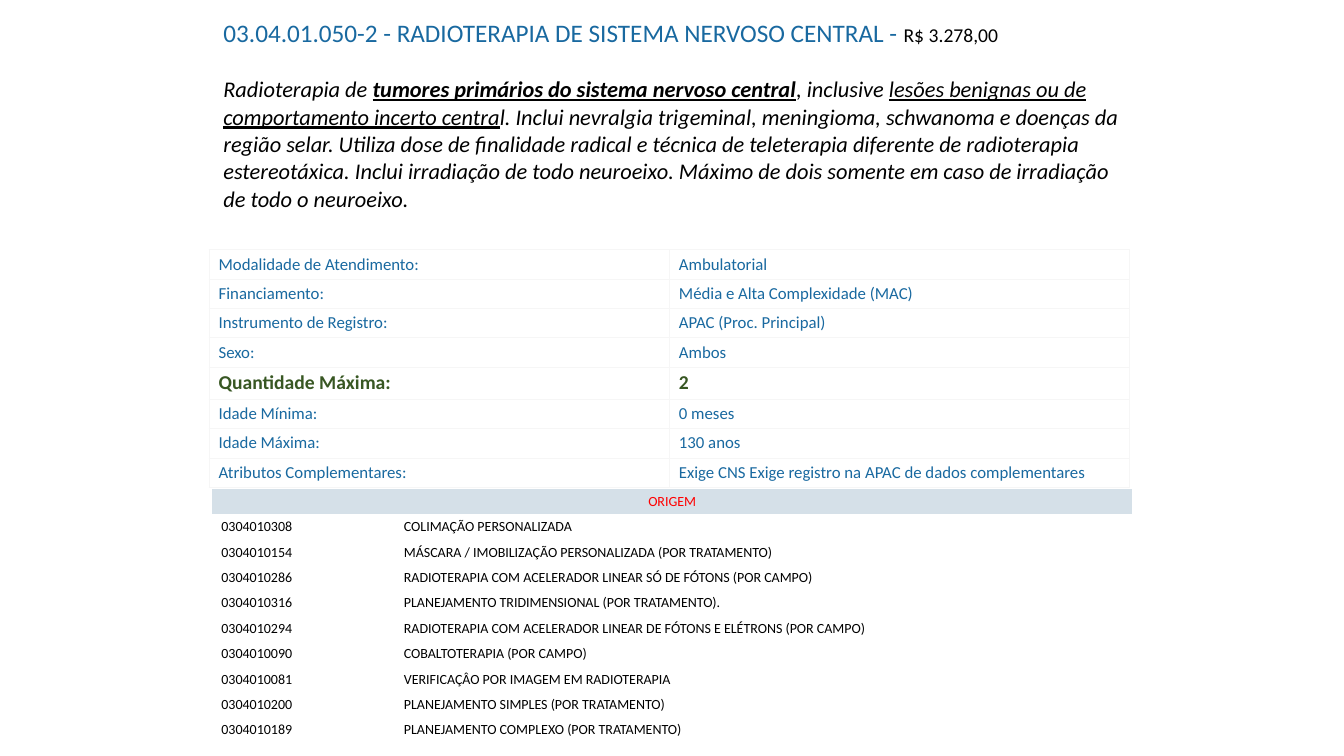
from dataclasses import dataclass

from lxml import etree
from pptx import Presentation
from pptx.dml.color import RGBColor
from pptx.enum.text import MSO_ANCHOR, PP_ALIGN
from pptx.oxml.ns import qn
from pptx.util import Cm, Pt

MIDDLE = MSO_ANCHOR.MIDDLE
LEFT, CENTER = PP_ALIGN.LEFT, PP_ALIGN.CENTER
PLAIN_TABLE = "{2D5ABB26-0587-4C30-8999-92F81FD0307C}"


@dataclass(frozen=True)
class Theme:
    font: str = "Calibri"
    blue: str = "1969A0"
    green: str = "385723"
    red: str = "FF0000"
    black: str = "000000"
    white: str = "FFFFFF"
    band: str = "D5E0E8"
    grid: str = "F6F6F6"
    title: int = 18
    description: int = 16
    emphasis: int = 14
    detail: int = 12
    code: int = 10


class ProcedureSlide:
    def __init__(self, slide, theme):
        self.slide = slide
        self.theme = theme

    def table(self, left, top, widths, heights):
        frame = self.slide.shapes.add_table(
            len(heights), len(widths), Cm(left), Cm(top),
            Cm(sum(widths)), Cm(sum(heights)))
        table = frame.table
        table.first_row = table.horz_banding = False
        table._tbl.tblPr.find(qn("a:tableStyleId")).text = PLAIN_TABLE
        for column, width in zip(table.columns, widths):
            column.width = Cm(width)
        for row, height in zip(table.rows, heights):
            row.height = Cm(height)
        return table

    def cell(self, cell, fill, margins=(0.24, 0.1)):
        cell.vertical_anchor = MIDDLE
        cell.margin_left = cell.margin_right = Cm(margins[0])
        cell.margin_top = cell.margin_bottom = Cm(margins[1])
        cell.fill.solid()
        cell.fill.fore_color.rgb = RGBColor.from_string(fill)

    def borders(self, cell, color, width=0.75):
        properties = cell._tc.get_or_add_tcPr()
        for place, side in enumerate(("a:lnL", "a:lnR", "a:lnT", "a:lnB")):
            line = etree.Element(qn(side), w=str(Pt(width)))
            fill = etree.SubElement(line, qn("a:solidFill"))
            etree.SubElement(fill, qn("a:srgbClr"), val=color)
            properties.insert(place, line)

    def run(self, paragraph, text, size, color,
            bold=False, italic=False, underline=False):
        run = paragraph.add_run()
        run.text = text
        font = run.font
        font.name = self.theme.font
        font.size = Pt(size)
        font.color.rgb = RGBColor.from_string(color)
        font.bold, font.italic, font.underline = bold, italic, underline

    def text_cell(self, cell, text, size, color, fill, bold=False, align=LEFT):
        self.cell(cell, fill)
        paragraph = cell.text_frame.paragraphs[0]
        paragraph.alignment = align
        self.run(paragraph, text, size, color, bold)


# Content: (text, bold, underline)
DESCRIPTION = [
    ("Radioterapia de ", False, False),
    ("tumores primários do sistema nervoso central", True, True),
    (", inclusive ", False, False),
    ("lesões benignas ou de comportamento incerto centra", False, True),
    ("l. Inclui nevralgia trigeminal, meningioma, schwanoma e doenças da "
     "região selar. Utiliza dose de finalidade radical e técnica de "
     "teleterapia diferente de radioterapia estereotáxica. Inclui irradiação "
     "de todo neuroeixo. Máximo de dois somente em caso de irradiação de "
     "todo o neuroeixo.", False, False),
]
ORIGINS = [
    ("0304010308", "COLIMAÇÃO PERSONALIZADA"),
    ("0304010154", "MÁSCARA / IMOBILIZAÇÃO PERSONALIZADA (POR TRATAMENTO)"),
    ("0304010286", "RADIOTERAPIA COM ACELERADOR LINEAR SÓ DE FÓTONS (POR CAMPO)"),
    ("0304010316", "PLANEJAMENTO TRIDIMENSIONAL (POR TRATAMENTO)."),
    ("0304010294",
     "RADIOTERAPIA COM ACELERADOR LINEAR DE FÓTONS E ELÉTRONS (POR CAMPO)"),
    ("0304010090", "COBALTOTERAPIA (POR CAMPO)"),
    ("0304010081", "VERIFICAÇÂO POR IMAGEM EM RADIOTERAPIA"),
    ("0304010200", "PLANEJAMENTO SIMPLES (POR TRATAMENTO)"),
    ("0304010189", "PLANEJAMENTO COMPLEXO (POR TRATAMENTO)"),
]
MAXIMUM = "Quantidade Máxima:"
DETAILS = [
    ("Modalidade de Atendimento:", "Ambulatorial"),
    ("Financiamento:", "Média e Alta Complexidade (MAC)"),
    ("Instrumento de Registro:", "APAC (Proc. Principal)"),
    ("Sexo:", "Ambos"),
    (MAXIMUM, "2"),
    ("Idade Mínima:", "0 meses"),
    ("Idade Máxima:", "130 anos"),
    ("Atributos Complementares:",
     "Exige CNS Exige registro na APAC de dados complementares"),
]


def main():
    presentation = Presentation()
    presentation.slide_width, presentation.slide_height = Cm(33.87), Cm(19.05)
    theme = Theme()
    page = ProcedureSlide(
        presentation.slides.add_slide(presentation.slide_layouts[6]), theme)

    # Procedure title, price and description
    summary = page.table(5.38, 0.33, [23.2], [5.08]).cell(0, 0)
    page.cell(summary, theme.white, (0.25, 0.13))
    title = summary.text_frame.paragraphs[0]
    page.run(title, "03.04.01.050-2 - RADIOTERAPIA DE SISTEMA NERVOSO CENTRAL - ",
             theme.title, theme.blue)
    page.run(title, "R$ 3.278,00", theme.emphasis, theme.black)
    description = summary.text_frame.add_paragraph()
    description.space_before = Pt(19.5)
    for text, bold, underline in DESCRIPTION:
        page.run(description, text, theme.description, theme.black,
                 bold, True, underline)

    # Origin codes under a merged heading
    origins = page.table(5.34, 12.32, [4.6, 18.6], [0.64] * (len(ORIGINS) + 1))
    heading = origins.cell(0, 0)
    heading.merge(origins.cell(0, 1))
    page.text_cell(heading, "ORIGEM", theme.code, theme.red, theme.band,
                   align=CENTER)
    for row, origin in enumerate(ORIGINS, 1):
        for column, text in enumerate(origin):
            page.text_cell(origins.cell(row, column), text, theme.code,
                           theme.black, theme.white)

    # Procedure attributes, with the maximum quantity emphasised
    heights = [0.81 if label == MAXIMUM else 0.74 for label, _ in DETAILS]
    details = page.table(5.27, 6.29, [11.6, 11.6], heights)
    for row, detail in enumerate(DETAILS):
        strong = detail[0] == MAXIMUM
        size = theme.emphasis if strong else theme.detail
        color = theme.green if strong else theme.blue
        for column, text in enumerate(detail):
            cell = details.cell(row, column)
            page.text_cell(cell, text, size, color, theme.white, strong)
            page.borders(cell, theme.grid)

    presentation.save("out.pptx")


if __name__ == "__main__":
    main()
